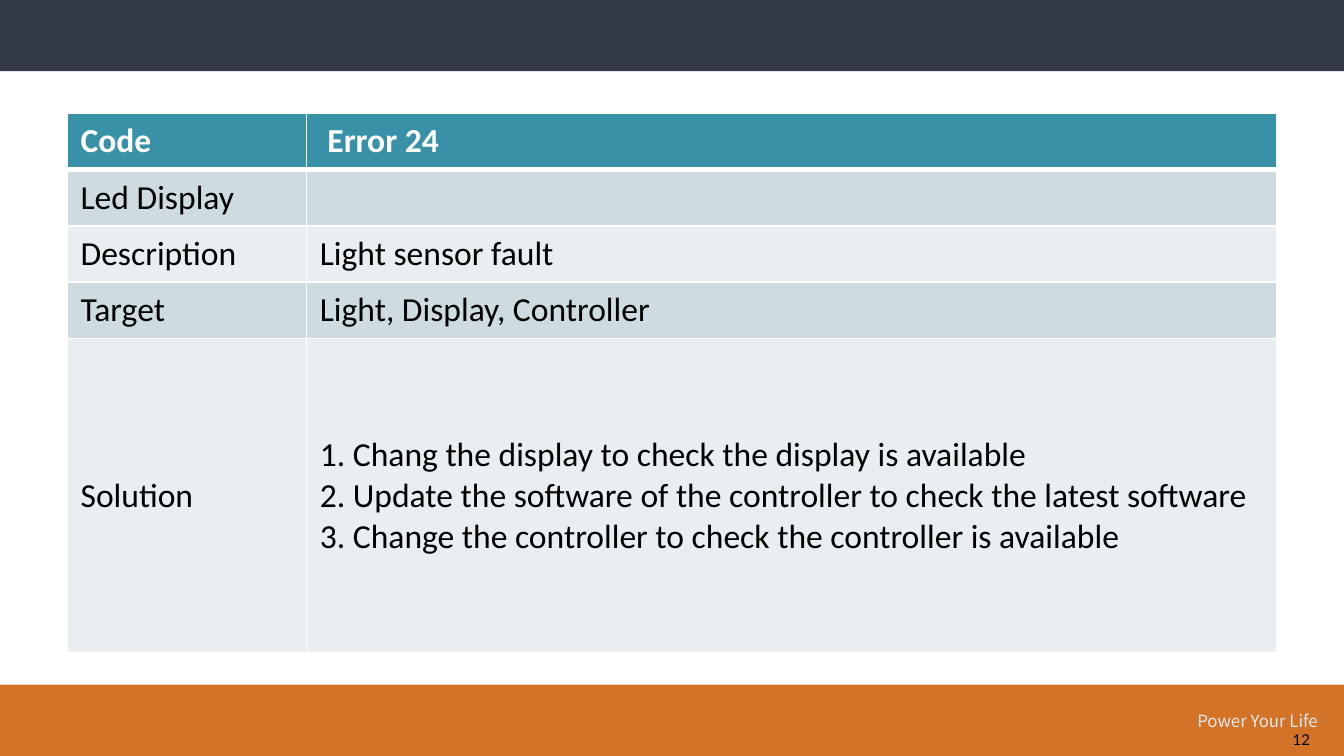
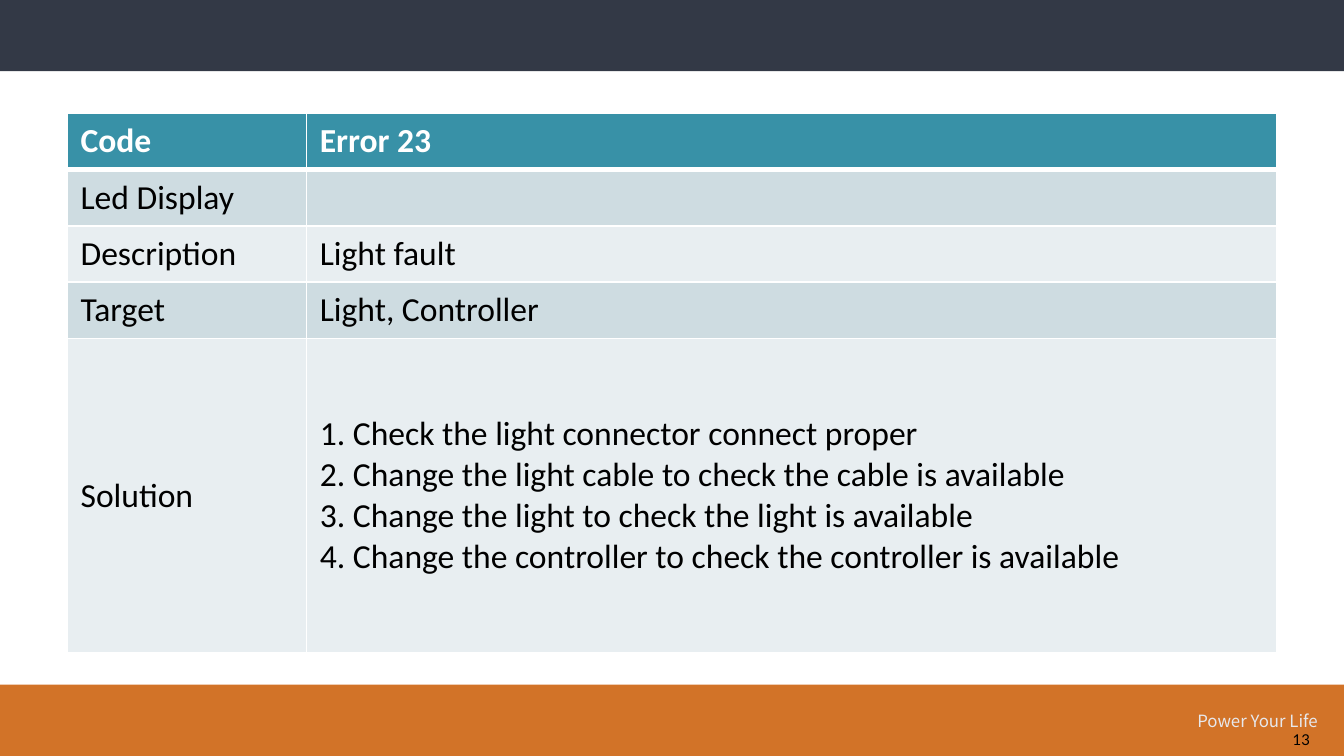
from lxml import etree
from pptx import Presentation
from pptx.dml.color import RGBColor
from pptx.enum.shapes import MSO_SHAPE
from pptx.enum.text import MSO_ANCHOR, MSO_AUTO_SIZE
from pptx.oxml.ns import qn
from pptx.util import Inches, Pt

RECTANGLE = MSO_SHAPE.RECTANGLE
MIDDLE = MSO_ANCHOR.MIDDLE
FIT_SHAPE = MSO_AUTO_SIZE.SHAPE_TO_FIT_TEXT
NO_FIT = MSO_AUTO_SIZE.NONE

ROW_LABELS = ["Code", "Led Display", "Description", "Target", "Solution"]
FAULTS = [
    (12, [
        " Error 24",
        "",
        "Light sensor fault",
        "Light, Display, Controller",
        "1. Chang the display to check the display is available\n"
        "2. Update the software of the controller to check the latest software\n"
        "3. Change the controller to check the controller is available",
    ]),
    (13, [
        "Error 23",
        "",
        "Light fault",
        "Light, Controller",
        "1. Check the light connector connect proper\n"
        "2. Change the light cable to check the cable is available\n"
        "3. Change the light to check the light is available\n"
        "4. Change the controller to check the controller is available",
    ]),
]
SLOGAN = "Power Your Life"

COLORS = {
    "top_band": "333946",
    "bottom_band": "D27328",
    "slogan": "E7E8EC",
    "header": "3891A7",
    "odd_row": "CEDCE1",
    "even_row": "E8EEF1",
    "white": "FFFFFF",
    "black": "000000",
}
TABLE_FONT, SLOGAN_FONT, NUMBER_FONT = "Calibri", "Noto Sans CJK SC", "Lato"

SLIDE_WIDTH, SLIDE_HEIGHT = 10, 5.625
BAND_HEIGHT = 0.53
TABLE_LEFT, TABLE_TOP = 0.5, 0.84
COLUMN_WIDTHS = [1.78, 7.22]
ROW_HEIGHTS = [0.42] * 4 + [2.34]


def color(name):
    return RGBColor.from_string(COLORS[name])


def style_text(frame, font_name, size, color_name, bold=False):
    for paragraph in frame.paragraphs:
        for run in paragraph.runs:
            run.font.name = font_name
            run.font.size = Pt(size)
            run.font.bold = bold
            run.font.color.rgb = color(color_name)


def add_band(slide, top, color_name):
    band = slide.shapes.add_shape(RECTANGLE, 0, Inches(top),
                                  Inches(SLIDE_WIDTH), Inches(BAND_HEIGHT))
    band.shadow.inherit = False
    band.fill.solid()
    band.fill.fore_color.rgb = color(color_name)
    band.line.fill.background()


def add_label(slide, text, box, fit, font_name, size, color_name):
    frame = slide.shapes.add_textbox(*map(Inches, box)).text_frame
    frame.word_wrap = True
    frame.auto_size = fit
    frame.text = text
    style_text(frame, font_name, size, color_name)


def add_frame(slide, number):
    """Add the bands, slogan and page number that every slide carries."""
    add_band(slide, 0, "top_band")
    add_band(slide, SLIDE_HEIGHT - BAND_HEIGHT, "bottom_band")
    add_label(slide, SLOGAN, (8.81, 5.24, 1.19, 0.25), FIT_SHAPE,
              SLOGAN_FONT, 9, "slogan")
    add_label(slide, str(number), (9.52, 5.39, 0.48, 0.2), NO_FIT,
              NUMBER_FONT, 8, "black")


def set_borders(cell, widths):
    """Draw white borders; widths maps the sides L, R, T and B to points."""
    properties = cell._tc.get_or_add_tcPr()
    for position, (side, width) in enumerate(widths.items()):
        line = etree.Element(qn(f"a:ln{side}"), w=str(Pt(width)))
        fill = etree.SubElement(line, qn("a:solidFill"))
        etree.SubElement(fill, qn("a:srgbClr"), val=COLORS["white"])
        properties.insert(position, line)


def row_fill(row):
    if row == 0:
        return "header"
    return "odd_row" if row % 2 else "even_row"


def add_fault_table(slide, values):
    table = slide.shapes.add_table(
        len(ROW_LABELS), len(COLUMN_WIDTHS), Inches(TABLE_LEFT), Inches(TABLE_TOP),
        Inches(sum(COLUMN_WIDTHS)), Inches(sum(ROW_HEIGHTS))).table
    for column, width in zip(table.columns, COLUMN_WIDTHS):
        column.width = Inches(width)
    for row, entries in enumerate(zip(ROW_LABELS, values)):
        table.rows[row].height = Inches(ROW_HEIGHTS[row])
        is_header = row == 0
        for column, entry in enumerate(entries):
            cell = table.cell(row, column)
            cell.text_frame.text = entry
            cell.vertical_anchor = MIDDLE
            cell.fill.solid()
            cell.fill.fore_color.rgb = color(row_fill(row))
            style_text(cell.text_frame, TABLE_FONT, 18,
                       "white" if is_header else "black", is_header)
            set_borders(cell, {"L": 1, "R": 1, "T": 3 if row == 1 else 1,
                               "B": 3 if is_header else 1})


def main():
    deck = Presentation()
    deck.slide_width = Inches(SLIDE_WIDTH)
    deck.slide_height = Inches(SLIDE_HEIGHT)
    blank = deck.slide_layouts[6]
    for number, values in FAULTS:
        slide = deck.slides.add_slide(blank)
        add_frame(slide, number)
        add_fault_table(slide, values)
    deck.save("out.pptx")


if __name__ == "__main__":
    main()
